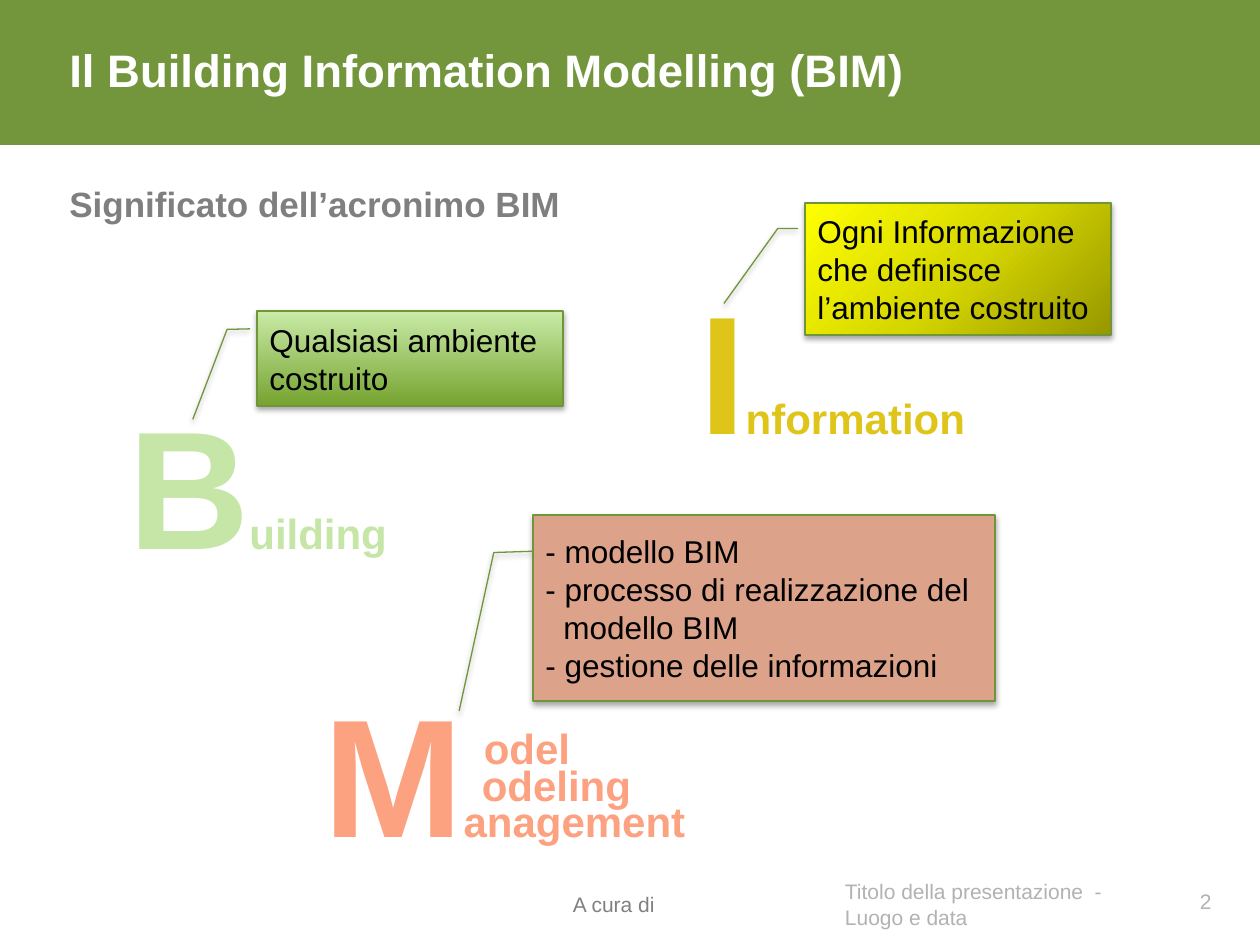
from pptx import Presentation
from pptx.dml.color import RGBColor
from pptx.enum.shapes import MSO_SHAPE
from pptx.enum.text import MSO_ANCHOR, PP_ALIGN
from pptx.oxml import parse_xml
from pptx.oxml.ns import nsdecls, qn
from pptx.util import Pt

FONT = "Arial"
WHITE = RGBColor(0xFF, 0xFF, 0xFF)
BLACK = RGBColor(0x00, 0x00, 0x00)
BANNER = RGBColor(0x73, 0x96, 0x3D)
BORDER = RGBColor(0x71, 0x95, 0x39)
HEADING = RGBColor(0x7F, 0x7F, 0x7F)
CREDIT = RGBColor(0x80, 0x80, 0x80)
FOOTER = RGBColor(0xB2, 0xB2, 0xB2)
BUILDING = RGBColor(0xC6, 0xE6, 0xA8)
INFORMATION = RGBColor(0xDF, 0xC5, 0x19)
MODEL = RGBColor(0xFD, 0xA2, 0x80)
MODEL_BOX = RGBColor(0xDD, 0xA2, 0x8A)
GREEN_STOPS = [(0, RGBColor(0x76, 0xA3, 0x30)), (100, RGBColor(0xC9, 0xEB, 0xA7))]
YELLOW_STOPS = [(0, RGBColor(0x97, 0x97, 0x00)), (50, RGBColor(0xD7, 0xD7, 0x00)),
                (100, RGBColor(0xFF, 0xFF, 0x00))]


def px(n):
    """Slide pixels (126 to the inch) as EMU."""
    return round(n * 914400 / 126)


def add_run(p, text, size, color, bold=False):
    r = p.add_run()
    r.text = text
    r.font.name = FONT
    r.font.size = Pt(size)
    r.font.bold = bold
    r.font.color.rgb = color


def add_text(slide, box, runs, color, bold=False, align=PP_ALIGN.LEFT,
             anchor=MSO_ANCHOR.TOP, wrap=True):
    """Text box with one paragraph of (text, size) runs."""
    tf = slide.shapes.add_textbox(*map(px, box)).text_frame
    tf.word_wrap = wrap
    tf.vertical_anchor = anchor
    p = tf.paragraphs[0]
    p.alignment = align
    for text, size in runs:
        add_run(p, text, size, color, bold)
    return tf


def add_footer(slide, box, text, color):
    tf = add_text(slide, box, [(text, 12)], color, anchor=MSO_ANCHOR.MIDDLE)
    tf.margin_left = tf.margin_bottom = 0


def add_acronym(slide, box, runs, color, wrap=False):
    add_text(slide, box, runs, color, bold=True, align=PP_ALIGN.CENTER, wrap=wrap)


def set_gradient(s, stops, angle):
    s.fill.gradient()
    s.fill.gradient_angle = angle
    gs_lst = s._element.spPr.find(qn("a:gradFill")).find(qn("a:gsLst"))
    for gs in list(gs_lst):
        gs_lst.remove(gs)
    for pos, color in stops:
        gs_lst.append(parse_xml(
            f'<a:gs {nsdecls("a")} pos="{pos * 1000}"><a:srgbClr val="{color}"/></a:gs>'))


def set_shadow(s):
    s.shadow.inherit = False
    s._element.spPr.find(qn("a:effectLst")).append(parse_xml(
        f'<a:outerShdw {nsdecls("a")} blurRad="40000" dist="23000" dir="5400000" '
        'rotWithShape="0"><a:srgbClr val="000000"><a:alpha val="35000"/>'
        '</a:srgbClr></a:outerShdw>'))


def add_callout(slide, box, leader, lines):
    """Callout whose lines are (text, left indent in px)."""
    s = slide.shapes.add_shape(MSO_SHAPE.LINE_CALLOUT_2, *map(px, box))
    for i, value in enumerate(leader):
        s.adjustments[i] = value
    s.line.color.rgb = BORDER
    s.line.width = Pt(0.75)
    set_shadow(s)
    tf = s.text_frame
    tf.word_wrap = True
    tf.vertical_anchor = MSO_ANCHOR.MIDDLE
    for i, (text, indent) in enumerate(lines):
        p = tf.paragraphs[0] if i == 0 else tf.add_paragraph()
        p.alignment = PP_ALIGN.LEFT
        if indent:
            p._p.get_or_add_pPr().set("marL", str(px(indent)))
        add_run(p, text, 18, BLACK)
    return s


def main():
    prs = Presentation()
    prs.slide_width, prs.slide_height = px(1260), px(945)
    slide = prs.slides.add_slide(prs.slide_layouts[6])

    # Banner, title and heading
    banner = slide.shapes.add_shape(MSO_SHAPE.RECTANGLE, 0, 0, px(1260), px(145))
    banner.shadow.inherit = False
    banner.fill.solid()
    banner.fill.fore_color.rgb = BANNER
    banner.line.fill.background()
    tf = add_text(slide, (57, 42, 1134, 55), [("Il Building Information Modelling (BIM)", 26)],
                  WHITE, bold=True, anchor=MSO_ANCHOR.MIDDLE)
    tf.margin_top = tf.margin_bottom = 0
    add_text(slide, (57, 176, 1134, 55), [("Significato dell’acronimo BIM", 20)],
             HEADING, bold=True)

    # Footer
    add_footer(slide, (573, 876, 277, 50), "A cura di", CREDIT)
    add_footer(slide, (845, 876, 306, 50), "Titolo della presentazione  - Luogo e data", FOOTER)
    add_text(slide, (1152, 876, 72, 50), [("2", 12)], FOOTER,
             align=PP_ALIGN.RIGHT, anchor=MSO_ANCHOR.MIDDLE)

    # Acronym words
    add_acronym(slide, (110, 375, 295, 217), [("B", 96), ("uilding", 24)], BUILDING, wrap=True)
    add_acronym(slide, (685, 260, 294, 217), [("I", 96), ("nformation", 24)], INFORMATION)
    add_acronym(slide, (309, 663, 391, 217), [("M", 96), ("anagement", 24)], MODEL)
    add_acronym(slide, (471, 716, 112, 63), [("odel", 24)], MODEL)
    add_acronym(slide, (442, 753, 229, 63), [("odeling", 24)], MODEL)

    # Callouts
    s = add_callout(slide, (257, 311, 306, 95),
                    (0.188, -0.023, 0.194, -0.098, 1.141, -0.21),
                    [("Qualsiasi ambiente costruito", 0)])
    set_gradient(s, GREEN_STOPS, 90)
    s = add_callout(slide, (805, 203, 306, 132),
                    (0.193, -0.023, 0.193, -0.089, 0.761, -0.265),
                    [("Ogni Informazione che definisce l’ambiente costruito", 0)])
    set_gradient(s, YELLOW_STOPS, 135)
    s = add_callout(slide, (533, 515, 462, 186),
                    (0.195, 0.001, 0.202, -0.085, 1.054, -0.16),
                    [("- modello BIM", 0), ("- processo di realizzazione del", 0),
                     ("modello BIM", 18), ("- gestione delle informazioni", 0)])
    s.fill.solid()
    s.fill.fore_color.rgb = MODEL_BOX

    prs.save("out.pptx")


if __name__ == "__main__":
    main()
